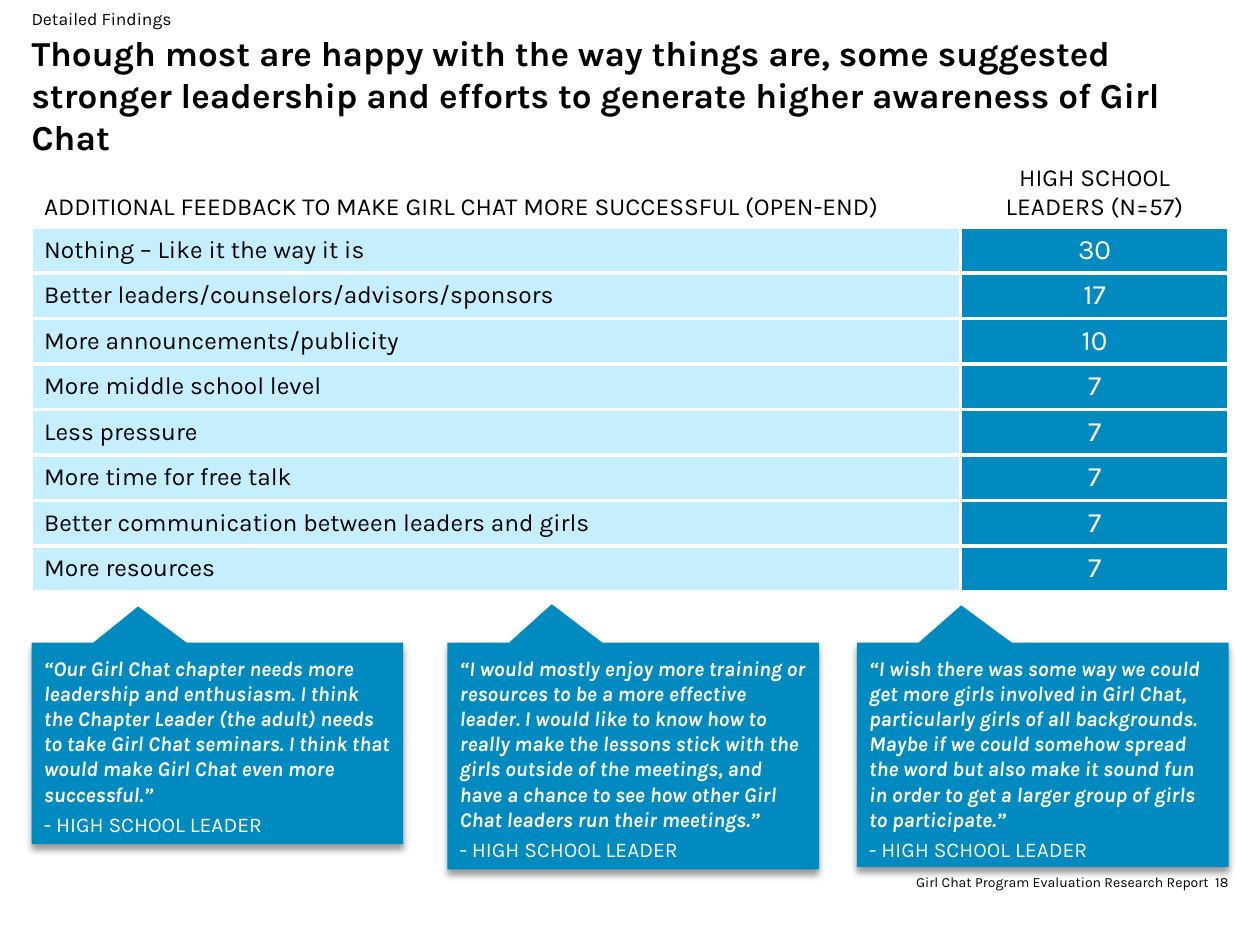
"""Build the feedback slide with its table and three leader quotes."""
from lxml import etree
from pptx import Presentation
from pptx.dml.color import RGBColor
from pptx.enum import shapes, text
from pptx.oxml import ns
from pptx.util import Pt

FONT = "Karla"
COLORS = {"black": "000000", "white": "FFFFFF", "pale": "C5EEFF", "blue": "008ABF"}
LEFT, MIDDLE, RIGHT = text.PP_ALIGN.LEFT, text.PP_ALIGN.CENTER, text.PP_ALIGN.RIGHT
TOP, CENTER, BOTTOM = text.MSO_ANCHOR.TOP, text.MSO_ANCHOR.MIDDLE, text.MSO_ANCHOR.BOTTOM

TITLE = ("Though most are happy with the way things are, some suggested stronger "
         "leadership and efforts to generate higher awareness of Girl Chat")
HEADINGS = ("ADDITIONAL FEEDBACK TO MAKE GIRL CHAT MORE SUCCESSFUL (OPEN-END)",
            "HIGH SCHOOL LEADERS (N=57)")
FEEDBACK = [
    ("Nothing – Like it the way it is", 30),
    ("Better leaders/counselors/advisors/sponsors", 17),
    ("More announcements/publicity", 10),
    ("More middle school level", 7),
    ("Less pressure", 7),
    ("More time for free talk", 7),
    ("Better communication between leaders and girls", 7),
    ("More resources", 7),
]
QUOTES = [
    (18, 115.2, (-0.213, -0.679),
     "“Our Girl Chat chapter needs more leadership and enthusiasm. I think the "
     "Chapter Leader (the adult) needs to take Girl Chat seminars. I think that "
     "would make Girl Chat even more successful.”"),
    (255.6, 129.6, (-0.219, -0.669),
     "“I would mostly enjoy more training or resources to be a more effective "
     "leader. I would like to know how to really make the lessons stick with the "
     "girls outside of the meetings, and have a chance to see how other Girl Chat "
     "leaders run their meetings.”"),
    (489.6, 128.2, (-0.219, -0.666),
     "“I wish there was some way we could get more girls involved in Girl Chat, "
     "particularly girls of all backgrounds. Maybe if we could somehow spread the "
     "word but also make it sound fun in order to get a larger group of girls to "
     "participate.”"),
]


def rgb(name):
    return RGBColor.from_string(COLORS[name])


def add_span(para, words, size, color="black", bold=False, italic=False):
    span = para.add_run()
    span.text = words
    font = span.font
    font.name, font.size, font.bold, font.italic = FONT, Pt(size), bold, italic
    font.color.rgb = rgb(color)


def set_frame(frame, margin, anchor):
    frame.word_wrap = True
    frame.auto_size = text.MSO_AUTO_SIZE.NONE
    frame.vertical_anchor = anchor
    frame.margin_left = frame.margin_right = Pt(margin)
    frame.margin_top = frame.margin_bottom = Pt(margin)


def set_title(page, words):
    title = page.shapes.title
    title.left, title.top, title.width, title.height = Pt(18), Pt(18), Pt(687.6), Pt(72)
    set_frame(title.text_frame, 0, CENTER)
    para = title.text_frame.paragraphs[0]
    para.alignment = LEFT
    add_span(para, words, 20, bold=True)


def add_label(page, place, words, size, align=LEFT, anchor=CENTER):
    box = page.shapes.add_textbox(*map(Pt, place))
    set_frame(box.text_frame, 0, anchor)
    para = box.text_frame.paragraphs[0]
    para.alignment = align
    add_span(para, words, size)


def add_borders(cell):
    properties = cell._tc.get_or_add_tcPr()
    for index, side in enumerate(("lnL", "lnR", "lnT", "lnB")):
        line = etree.Element(ns.qn(f"a:{side}"), w=str(Pt(2.25)))
        fill = etree.SubElement(line, ns.qn("a:solidFill"))
        etree.SubElement(fill, ns.qn("a:srgbClr"), val=COLORS["white"])
        properties.insert(index, line)


def fill_cell(cell, words, fill, size, color, align, anchor):
    cell.fill.solid()
    cell.fill.fore_color.rgb = rgb(fill)
    cell.vertical_anchor = anchor
    add_borders(cell)
    para = cell.text_frame.paragraphs[0]
    para.alignment = align
    add_span(para, words, size, color)


def add_feedback_table(page):
    header, row_height = 40, 26
    height = header + row_height * len(FEEDBACK)
    table = page.shapes.add_table(
        len(FEEDBACK) + 1, 2, Pt(18), Pt(90), Pt(684), Pt(height)).table
    table.columns[0].width, table.columns[1].width = Pt(531), Pt(153)
    table.rows[0].height = Pt(header)
    for column, (words, align) in enumerate(zip(HEADINGS, (LEFT, MIDDLE))):
        fill_cell(table.cell(0, column), words, "white", 14, "black", align, BOTTOM)
    for row, (reason, count) in enumerate(FEEDBACK, 1):
        table.rows[row].height = Pt(row_height)
        fill_cell(table.cell(row, 0), reason, "pale", 14, "black", LEFT, CENTER)
        fill_cell(table.cell(row, 1), str(count), "blue", 16, "white", MIDDLE, CENTER)


def add_shadow(shape):
    shape.shadow.inherit = False
    effects = shape._element.spPr.find(ns.qn("a:effectLst"))
    shadow = etree.SubElement(
        effects, ns.qn("a:outerShdw"), blurRad=str(Pt(4)), dist=str(Pt(3)),
        dir="5400000", algn="t", rotWithShape="0")
    color = etree.SubElement(shadow, ns.qn("a:srgbClr"), val=COLORS["black"])
    etree.SubElement(color, ns.qn("a:alpha"), val="40000")


def add_quote(page, left, height, tip, words):
    callout = page.shapes.add_shape(
        shapes.MSO_SHAPE.RECTANGULAR_CALLOUT, Pt(left), Pt(367.2), Pt(212.4), Pt(height))
    callout.adjustments[0], callout.adjustments[1] = tip
    callout.fill.solid()
    callout.fill.fore_color.rgb = rgb("blue")
    callout.line.fill.background()
    add_shadow(callout)
    frame = callout.text_frame
    set_frame(frame, 7.2, TOP)
    quote, source = frame.paragraphs[0], frame.add_paragraph()
    quote.alignment = source.alignment = LEFT
    source.space_before = Pt(3)
    add_span(quote, words, 12, "white", bold=True, italic=True)
    add_span(source, "- HIGH SCHOOL LEADER", 12, "white")


def main():
    deck = Presentation()
    deck.slide_width, deck.slide_height = Pt(720), Pt(540)
    page = deck.slides.add_slide(deck.slide_layouts[5])
    set_title(page, TITLE)
    add_feedback_table(page)
    add_label(page, (18, 4.3, 241.2, 12.2), "Detailed Findings", 10, anchor=TOP)
    add_label(page, (683.3, 486, 18.7, 36), "18", 8, RIGHT)
    add_label(page, (463, 486, 228.2, 36),
              "Girl Chat Program Evaluation Research Report", 8, RIGHT)
    for quote in QUOTES:
        add_quote(page, *quote)
    deck.save("out.pptx")


if __name__ == "__main__":
    main()
